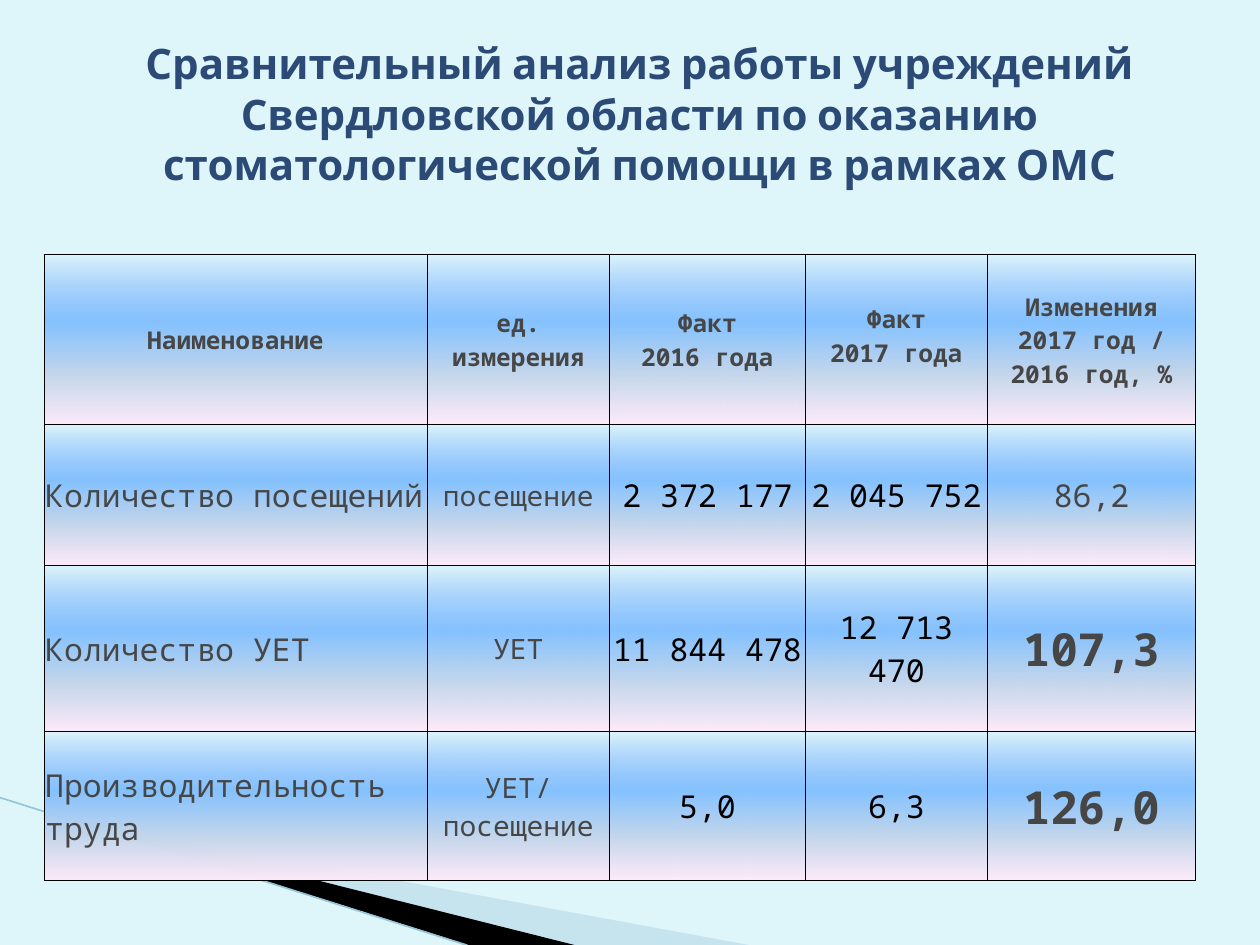
"""Build the slide comparing dental care figures for 2016 and 2017."""
import lxml.etree
import pptx
import pptx.dml.color
import pptx.enum.shapes
import pptx.enum.text
import pptx.oxml.ns
import pptx.util
from pptx.util import Cm

TITLE = ("Сравнительный анализ работы учреждений Свердловской области "
         "по оказанию стоматологической помощи в рамках ОМС")
HEADINGS = ["Наименование", "ед. измерения", "Факт\n2016 года", "Факт\n2017 года",
            "Изменения 2017 год / 2016 год, %"]
INDICATORS = [
    ["Количество посещений", "посещение", "2 372 177", "2 045 752", "86,2"],
    ["Количество УЕТ", "УЕТ", "11 844 478", "12 713 470", "107,3"],
    ["Производительность труда", "УЕТ/\nпосещение", "5,0", "6,3", "126,0"],
]
GROWTH = {"107,3", "126,0"}
COLUMN_WIDTHS = [7.72, 3.68, 3.94, 3.68, 4.19]
ROW_HEIGHTS = [3.43, 2.84, 3.35, 3]
GREY, BLACK = "464646", "000000"
COLUMN_STYLES = [(18, GREY), (16, GREY), (18, BLACK), (18, BLACK), (18, GREY)]
GRADIENT = [(0, "5E9EFF", 0), (40, "85C2FF", 100), (70, "C4D6EB", 100), (100, "FFEBFA", 100)]
WEDGES = [
    ("A0CBDC", 40, [(1.4, 16.53), (15.09, 19.05), (11.58, 19.05), (1.4, 16.51)]),
    ("000000", 100, [(1.35, 16.48), (11.58, 19.05), (9.45, 19.05), (1.37, 16.51)]),
]


def colour(code):
    return pptx.dml.color.RGBColor.from_string(code)


def add_xml(parent, tag, **attributes):
    return lxml.etree.SubElement(parent, pptx.oxml.ns.qn(tag), attributes)


def add_colour(parent, code, opacity=100):
    shade = add_xml(parent, "a:srgbClr", val=code)
    if opacity < 100:
        add_xml(shade, "a:alpha", val=str(opacity * 1000))


def style_text(frame, font_name, size, code, bold, centred=True):
    for paragraph in frame.paragraphs:
        align = pptx.enum.text.PP_ALIGN
        paragraph.alignment = align.CENTER if centred else align.LEFT
        for run in paragraph.runs:
            run.font.name = font_name
            run.font.size = pptx.util.Pt(size)
            run.font.bold = bold
            run.font.color.rgb = colour(code)


def paint_cell(cell):
    properties = cell._tc.get_or_add_tcPr()
    for side in ("a:lnL", "a:lnR", "a:lnT", "a:lnB"):
        border = add_xml(properties, side, w=str(pptx.util.Pt(0.5)))
        add_colour(add_xml(border, "a:solidFill"), BLACK)
    gradient = add_xml(properties, "a:gradFill", rotWithShape="1")
    stops = add_xml(gradient, "a:gsLst")
    for position, code, opacity in GRADIENT:
        add_colour(add_xml(stops, "a:gs", pos=str(position * 1000)), code, opacity)
    add_xml(gradient, "a:lin", ang="5400000", scaled="0")


def add_wedges(slide):
    for code, opacity, (start, *corners) in WEDGES:
        builder = slide.shapes.build_freeform(Cm(start[0]), Cm(start[1]))
        builder.add_line_segments([(Cm(x), Cm(y)) for x, y in corners])
        wedge = builder.convert_to_shape()
        wedge.shadow.inherit = False
        wedge.line.fill.background()
        wedge.fill.solid()
        wedge.fill.fore_color.rgb = colour(code)
        if opacity < 100:
            shade = wedge._element.spPr.find(".//" + pptx.oxml.ns.qn("a:srgbClr"))
            add_xml(shade, "a:alpha", val=str(opacity * 1000))
    edge = slide.shapes.add_connector(
        pptx.enum.shapes.MSO_CONNECTOR.STRAIGHT, Cm(0), Cm(16.08), Cm(9.4), Cm(19.05))
    edge.line.color.rgb = colour("97C5D8")
    edge.line.width = pptx.util.Pt(0.95)
    add_xml(edge._element.spPr, "a:effectLst")


def add_title(slide):
    title = slide.shapes.add_textbox(Cm(1.3), Cm(0.64), Cm(23.19), Cm(3.33))
    title.text_frame.word_wrap = True
    title.text_frame.text = TITLE
    style_text(title.text_frame, "Cabin", 24, "2B4A76", True)


def add_comparison(slide):
    rows = [HEADINGS] + INDICATORS
    table = slide.shapes.add_table(
        len(rows), len(HEADINGS), Cm(0.89), Cm(5.13),
        Cm(sum(COLUMN_WIDTHS)), Cm(sum(ROW_HEIGHTS))).table
    table.first_row = table.horz_banding = False
    for column, width in zip(table.columns, COLUMN_WIDTHS):
        column.width = Cm(width)
    for row, height in zip(table.rows, ROW_HEIGHTS):
        row.height = Cm(height)
    for r, values in enumerate(rows):
        for c, value in enumerate(values):
            cell = table.cell(r, c)
            cell.text_frame.text = value
            cell.vertical_anchor = pptx.enum.text.MSO_ANCHOR.MIDDLE
            cell.margin_left = cell.margin_right = cell.margin_top = Cm(0.02)
            cell.margin_bottom = Cm(0.16 if value == "Факт\n2017 года" else 0)
            size, code = COLUMN_STYLES[c] if r else (14, GREY)
            if value in GROWTH:
                size = 26
            style_text(cell.text_frame, "Noto Sans Mono", size, code,
                       r == 0 or value in GROWTH, r == 0 or c > 0)
            paint_cell(cell)


def main():
    deck = pptx.Presentation()
    deck.slide_width, deck.slide_height = Cm(25.4), Cm(19.05)
    slide = deck.slides.add_slide(deck.slide_layouts[6])
    slide.background.fill.solid()
    slide.background.fill.fore_color.rgb = colour("DEF5FA")
    add_wedges(slide)
    add_title(slide)
    add_comparison(slide)
    deck.save("out.pptx")


if __name__ == "__main__":
    main()
